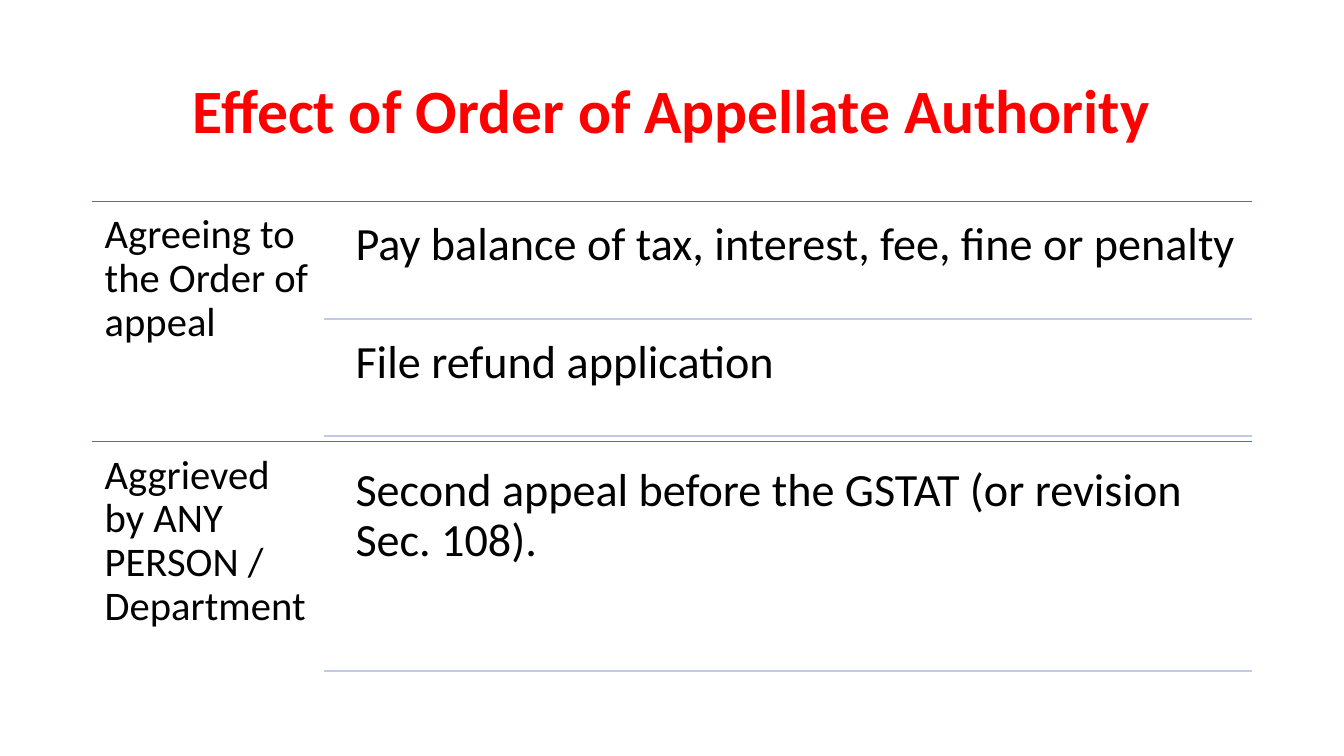
from lxml import etree
from pptx import Presentation
from pptx import util as u
from pptx.dml import color
from pptx.enum import shapes, text
from pptx.oxml import ns

THEME = {
    "font": "Calibri",
    "title": {"size": 44, "color": "FF0000", "bold": True},
    "label": {"size": 29, "color": "000000", "bold": False},
    "item": {"size": 33, "color": "000000", "bold": False},
    "band_rule": "4472C4",
    "item_rule": "C1C9E4",
}

prs = Presentation()
prs.slide_width, prs.slide_height = u.Cm(33.87), u.Cm(19.05)
s = prs.slides.add_slide(prs.slide_layouts[6])


def add_text(words, style, box, inset, anchor="TOP", align="LEFT"):
    look = THEME[style]
    tf = s.shapes.add_textbox(*(u.Cm(v) for v in box)).text_frame
    frame = {"word_wrap": True, "vertical_anchor": text.MSO_ANCHOR[anchor]}
    frame.update({f"margin_{side}": u.Cm(inset) for side in ("left", "top", "right", "bottom")})
    for name, value in frame.items():
        setattr(tf, name, value)
    p = tf.paragraphs[0]
    p.alignment, p.line_spacing = text.PP_ALIGN[align], 0.9
    r = p.add_run()
    r.text = words
    for name, value in {"name": THEME["font"], "size": u.Pt(look["size"]), "bold": look["bold"]}.items():
        setattr(r.font, name, value)
    r.font.color.rgb = color.RGBColor.from_string(look["color"])


def add_rule(left, y, style):
    sp = s.shapes.add_connector(shapes.MSO_CONNECTOR.STRAIGHT, u.Cm(left), u.Cm(y), u.Cm(RIGHT), u.Cm(y))
    sp.line.width = u.Pt(1)
    sp.line.color.rgb = color.RGBColor.from_string(THEME[style])
    etree.SubElement(sp._element.spPr, ns.qn("a:effectLst"))


# Layout
LEFT, RIGHT, TOP = 2.33, 31.54, 5.08
BAND_H, LABEL_W = 6.05, 5.84
ITEM_RULE_X, ITEM_X = LEFT + LABEL_W, 8.61
GAP_SHARE = 0.05  # gap between items, as a share of item height

# Title
add_text("Effect of Order of Appellate Authority", "title",
         (LEFT, 1.02, RIGHT - LEFT, 3.68), 0.25, "MIDDLE", "CENTER")

# Bands: a label on the left, its outcomes on the right
bands = [
    ("Agreeing to the Order of appeal",
     ["Pay balance of tax, interest, fee, fine or penalty", "File refund application"]),
    ("Aggrieved by ANY PERSON / Department",
     ["Second appeal before the GSTAT (or revision Sec. 108)."]),
]
for i, (label, items) in enumerate(bands):
    top = TOP + i * BAND_H
    add_rule(LEFT, top, "band_rule")
    add_text(label, "label", (LEFT, top, LABEL_W, BAND_H), 0.31)

    item_h = BAND_H / (len(items) * (1 + GAP_SHARE) + GAP_SHARE)
    gap = item_h * GAP_SHARE
    for j, item in enumerate(items):
        y = top + gap + j * (item_h + gap)
        add_text(item, "item", (ITEM_X, y, RIGHT - ITEM_X, item_h), 0.35)
        add_rule(ITEM_RULE_X, y + item_h, "item_rule")

prs.save("out.pptx")
